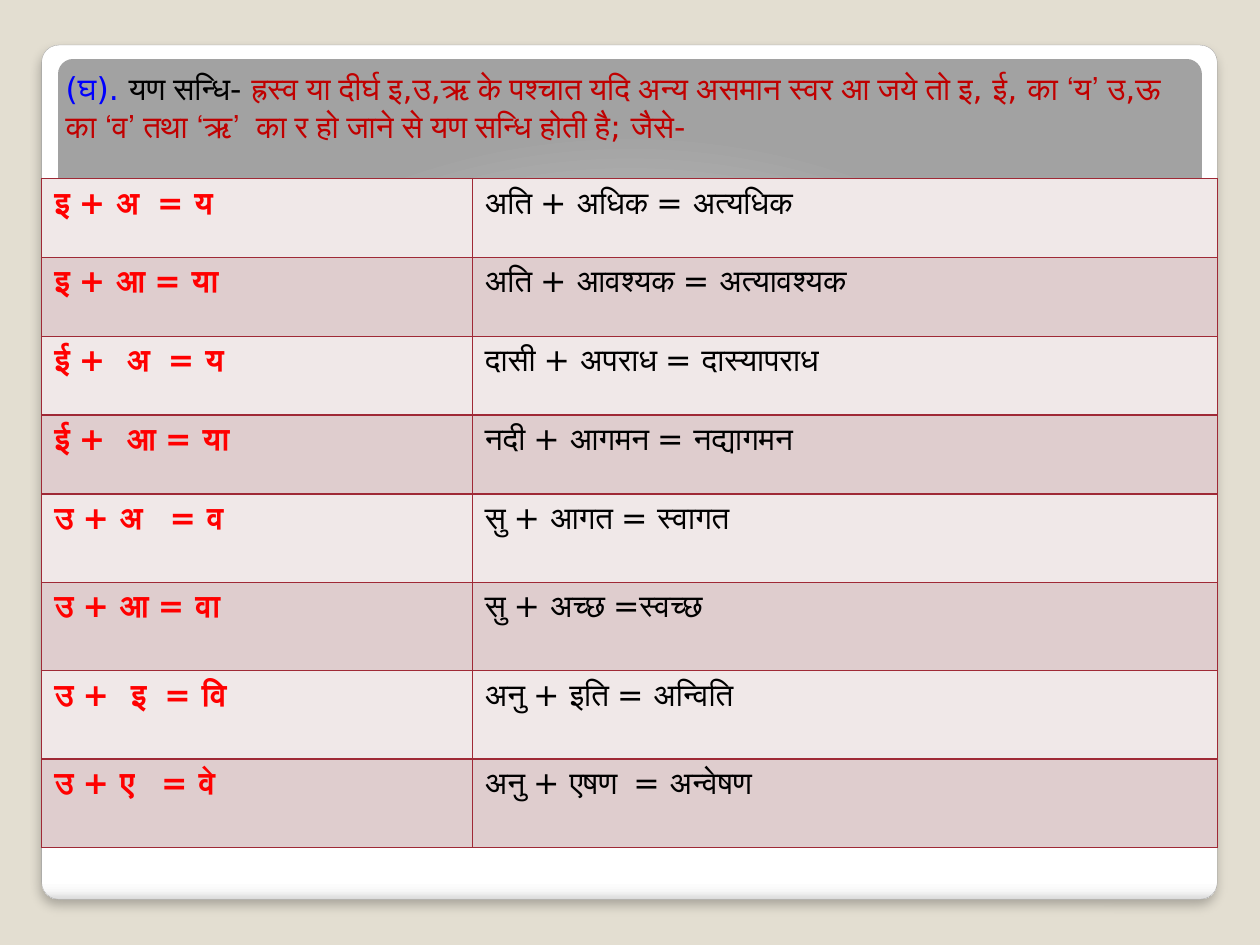
from lxml import etree
from pptx import Presentation
from pptx.dml.color import RGBColor as RGB
from pptx.enum.shapes import MSO_SHAPE as SHAPE
from pptx.enum.text import MSO_ANCHOR as ANCHOR, MSO_AUTO_SIZE as AUTOSIZE, PP_ALIGN as ALIGN
from pptx.oxml import parse_xml
from pptx.oxml.ns import nsdecls, qn
from pptx.util import Cm, Pt

THEME = {
    "font": "DejaVu Sans", "size": Pt(18),
    "background": "E3DED1", "card_line": "A4A4A4", "border": "9F2936",
    "bands": ("F0E8E8", "DFCDCE"),
    "marker": "0000FF", "text": "000000", "rule": "C00000", "formula": "FF0000",
    "card": ((0, "FFFFFF"), (98, "FFFFFF"), (99, "F7F7F7"), (100, "DADADA")),
    "panel": ((0, "FFFFFF"), (55, "E1E1E1"), (100, "A2A2A2")),
}


def add_rounded(page, left, top, width, height, stops, direction):
    """Add a rounded rectangle with a gradient fill and no outline."""
    shape = page.shapes.add_shape(SHAPE.ROUNDED_RECTANGLE, Cm(left), Cm(top), Cm(width), Cm(height))
    shape.adjustments[0] = 0.02
    shape.shadow.inherit = False
    shape.line.fill.background()
    stop_xml = "".join(
        f'<a:gs pos="{place * 1000}"><a:srgbClr val="{color}"/></a:gs>' for place, color in stops)
    geometry = shape.element.spPr.find(qn("a:prstGeom"))
    geometry.addnext(parse_xml(
        f'<a:gradFill {nsdecls("a")} rotWithShape="1"><a:gsLst>{stop_xml}</a:gsLst>{direction}</a:gradFill>'))
    return shape


def style_font(font, color, bold=False):
    font.name, font.size, font.bold = THEME["font"], THEME["size"], bold
    font.color.rgb = RGB.from_string(color)


deck = Presentation()
deck.slide_width, deck.slide_height = Cm(25.4), Cm(19.05)
page = deck.slides.add_slide(deck.slide_layouts[5])
page.background.fill.solid()
page.background.fill.fore_color.rgb = RGB.from_string(THEME["background"])

# White card with a soft shadow, and the grey panel on it
card = add_rounded(page, 0.84, 0.91, 23.7, 17.22, THEME["card"], '<a:lin ang="5400000" scaled="0"/>')
card.line.color.rgb = RGB.from_string(THEME["card_line"])
card.line.width = Pt(0.16)
effects = card.element.spPr.find(qn("a:effectLst"))
shadow = etree.SubElement(effects, qn("a:outerShdw"), blurRad=str(Pt(6)), dist=str(Pt(4)),
                          dir="5400000", algn="t", rotWithShape="0")
shade = etree.SubElement(shadow, qn("a:srgbClr"), val="000000")
etree.SubElement(shade, qn("a:alpha"), val="25000")
panel = add_rounded(
    page, 1.17, 1.19, 23.06, 15.24, THEME["panel"],
    '<a:path path="circle"><a:fillToRect l="50000" t="175000" r="50000" b="-75000"/></a:path>')

# Title: the rule of the sandhi, in front of the panel
title = page.shapes.title
panel.element.addnext(title.element)
title.left, title.top, title.width, title.height = Cm(1.07), Cm(1.27), Cm(23.29), Cm(1.8)
frame = title.text_frame
frame.word_wrap = True
frame.auto_size = AUTOSIZE.NONE
frame.vertical_anchor = ANCHOR.TOP
para = frame.paragraphs[0]
para.alignment = ALIGN.LEFT
for text, color in (
    ("(घ). ", "marker"),
    ("यण सन्धि- ", "text"),
    ("ह्रस्व या दीर्घ इ,उ,ऋ के पश्चात यदि अन्य असमान स्वर आ जये तो इ, ई, का ‘य’ उ,ऊ "
     "का ‘व’ तथा ‘ऋ’  का र हो जाने से यण सन्धि होती है; जैसे-", "rule"),
):
    span = para.add_run()
    span.text = text
    style_font(span.font, THEME[color])

# Table: vowel formula and example
examples = (
    ("इ + अ  = य", "अति + अधिक = अत्यधिक"),
    ("इ + आ = या", "अति + आवश्यक = अत्यावश्यक"),
    ("ई +  अ  = य", "दासी + अपराध = दास्यापराध"),
    ("ई +  आ = या", "नदी + आगमन = नद्यागमन"),
    ("उ + अ   = व", "सु + आगत = स्वागत"),
    ("उ + आ = वा", "सु + अच्छ =स्वच्छ"),
    ("उ +  इ  = वि", "अनु + इति = अन्विति"),
    ("उ + ए   = वे", "अनु + एषण  = अन्वेषण"),
)
table = page.shapes.add_table(len(examples), 2, Cm(0.84), Cm(3.6), Cm(23.7), Cm(13.48)).table
table.first_row = table.horz_banding = False
table.columns[0].width, table.columns[1].width = Cm(8.68), Cm(15.02)
for index, texts in enumerate(examples):
    table.rows[index].height = Cm(1.59) if index < 4 else Cm(1.78)
    for column, text in enumerate(texts):
        cell = table.cell(index, column)
        cell.text = text
        is_formula = column == 0
        style_font(cell.text_frame.paragraphs[0].font,
                   THEME["formula" if is_formula else "text"], is_formula)
        # Borders go before the fill in the cell properties
        properties = cell._tc.get_or_add_tcPr()
        for side in ("lnL", "lnR", "lnT", "lnB"):
            line = etree.SubElement(properties, qn(f"a:{side}"), w=str(Pt(1)))
            paint = etree.SubElement(line, qn("a:solidFill"))
            etree.SubElement(paint, qn("a:srgbClr"), val=THEME["border"])
        cell.fill.solid()
        cell.fill.fore_color.rgb = RGB.from_string(THEME["bands"][index % 2])

deck.save("out.pptx")
